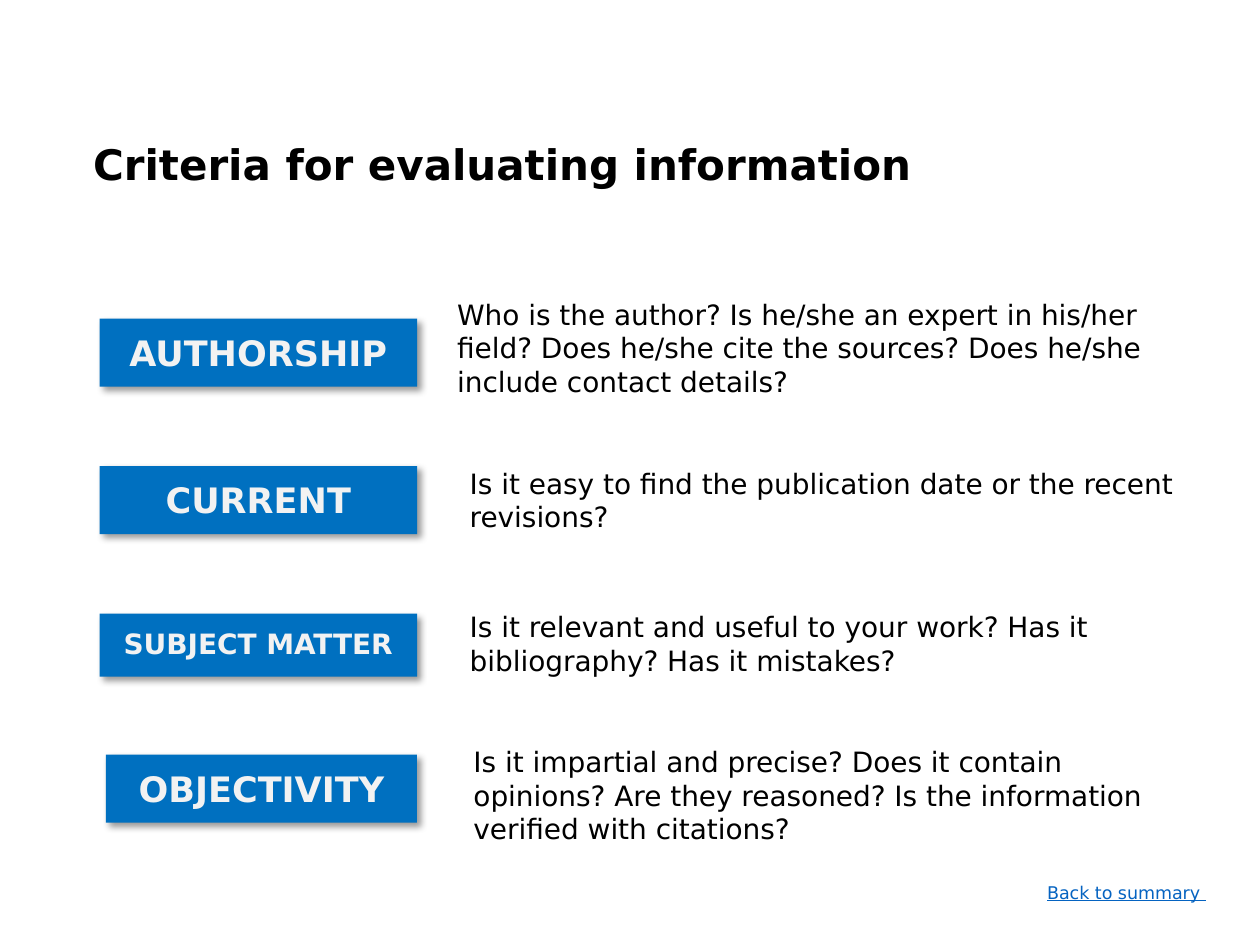
from lxml import etree
from pptx import Presentation
from pptx.dml.color import RGBColor
from pptx.enum.shapes import MSO_SHAPE
from pptx.enum.text import MSO_ANCHOR, PP_ALIGN
from pptx.oxml.ns import qn
from pptx.util import Inches, Pt

RECTANGLE = MSO_SHAPE.RECTANGLE
TOP = MSO_ANCHOR.TOP
LEFT, CENTER = PP_ALIGN.LEFT, PP_ALIGN.CENTER

FONT = "DejaVu Sans"
COLORS = {
    "text": "000000",
    "label": "0070C0",
    "label_text": "F2F2F2",
    "link": "0563C1",
    "shadow": "000000",
}


class CriteriaSlide:
    def __init__(self, presentation):
        self.slide = presentation.slides.add_slide(presentation.slide_layouts[6])

    def fill_text(self, shape, text, color="text", align=LEFT, **font_format):
        frame = shape.text_frame
        frame.word_wrap = True
        frame.vertical_anchor = TOP
        paragraph = frame.paragraphs[0]
        paragraph.alignment = align
        run = paragraph.add_run()
        run.text = text
        run.font.name = FONT
        run.font.color.rgb = RGBColor.from_string(COLORS[color])
        for attribute, value in font_format.items():
            setattr(run.font, attribute, value)
        return frame

    def text(self, box, text, **text_format):
        shape = self.slide.shapes.add_textbox(*map(Inches, box))
        self.fill_text(shape, text, **text_format)

    def label(self, box, text, size):
        shape = self.slide.shapes.add_shape(RECTANGLE, *map(Inches, box))
        shape.fill.solid()
        shape.fill.fore_color.rgb = RGBColor.from_string(COLORS["label"])
        shape.line.fill.background()
        self.drop_shadow(shape)
        frame = self.fill_text(shape, text, color="label_text", align=CENTER,
                               size=Pt(size), bold=True)
        for side in ("left", "top", "right", "bottom"):
            setattr(frame, f"margin_{side}", Inches(0.1))

    def drop_shadow(self, shape):
        shape.shadow.inherit = False
        effects = shape._element.spPr.find(qn("a:effectLst"))
        shadow = etree.SubElement(
            effects, qn("a:outerShdw"), blurRad=str(Pt(4)), dist=str(Pt(3)),
            dir=str(45 * 60000), algn="tl", rotWithShape="0")
        color = etree.SubElement(shadow, qn("a:srgbClr"), val=COLORS["shadow"])
        etree.SubElement(color, qn("a:alpha"), val="40000")


# Each criterion: label, its box and size, then its questions and their box
CRITERIA = [
    ("AUTHORSHIP", (0.79, 2.53, 2.52, 0.54), 20,
     "Who is the author? Is he/she an expert in his/her field? "
     "Does he/she cite the sources? Does he/she include contact details?",
     (3.53, 2.31, 5.83, 0.91)),
    ("CURRENT", (0.79, 3.7, 2.52, 0.54), 20,
     "Is it easy to find the publication date or the recent revisions?",
     (3.63, 3.65, 5.83, 0.64)),
    ("SUBJECT MATTER", (0.79, 4.87, 2.52, 0.5), 16,
     "Is it relevant and useful to your work? Has it bibliography? "
     "Has it mistakes?",
     (3.63, 4.79, 5.83, 0.64)),
    ("OBJECTIVITY", (0.84, 5.99, 2.47, 0.54), 20,
     "Is it impartial and precise? Does it contain opinions? "
     "Are they reasoned? Is the information verified with citations?",
     (3.66, 5.86, 5.83, 0.91)),
]


def main():
    presentation = Presentation()
    presentation.slide_width = Inches(10)
    presentation.slide_height = Inches(7.5)
    page = CriteriaSlide(presentation)

    # Title
    page.text((0.64, 1.05, 8.11, 0.5), "Criteria for evaluating information",
              size=Pt(24), bold=True)

    # Criteria with their questions
    for label, label_box, label_size, questions, questions_box in CRITERIA:
        page.label(label_box, label, label_size)
        page.text(questions_box, questions, size=Pt(16))

    # Footer
    page.text((8.13, 6.95, 1.62, 0.4), "Back to summary ", color="link",
              align=CENTER, size=Pt(10), underline=True)

    presentation.save("out.pptx")


if __name__ == "__main__":
    main()
